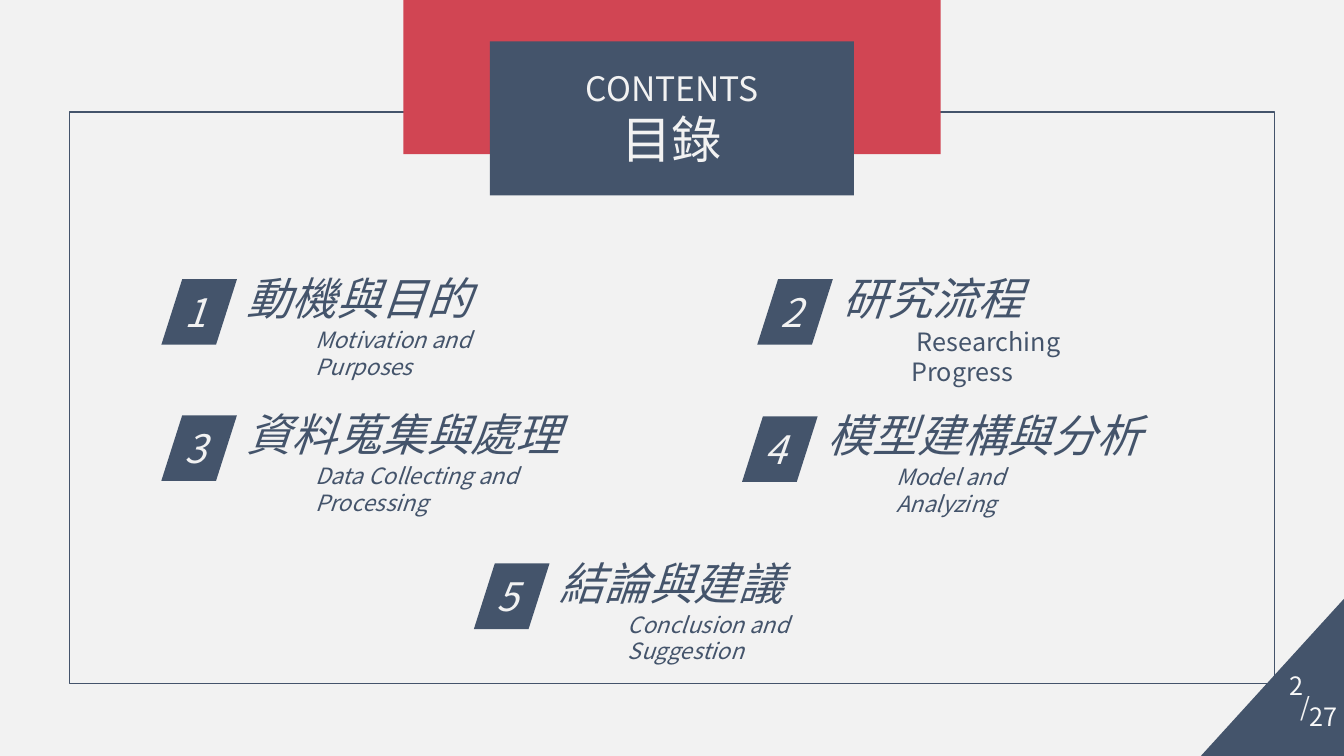
from lxml import etree
from pptx import Presentation
from pptx.dml.color import RGBColor
from pptx.enum.shapes import MSO_SHAPE
from pptx.enum.text import MSO_ANCHOR, MSO_AUTO_SIZE, PP_ALIGN
from pptx.oxml.ns import qn
from pptx.util import Inches, Pt

RECT = MSO_SHAPE.RECTANGLE
SLANT = MSO_SHAPE.PARALLELOGRAM
CORNER = MSO_SHAPE.RIGHT_TRIANGLE
CENTER, LEFT = PP_ALIGN.CENTER, PP_ALIGN.LEFT
MIDDLE, TOP = MSO_ANCHOR.MIDDLE, MSO_ANCHOR.TOP
FONT = "Noto Sans CJK SC"
COLORS = {"paper": "F2F2F2", "navy": "44546B", "red": "D14553", "white": "F8F8F8"}
WIDE, HIGH = 13.33, 7.5

TITLE = [("CONTENTS", 24), ("目錄", 36)]
# badge left and top, heading and its width, subtitle and its width
ITEMS = [
    (1.6, 2.77, "動機與目的", 2.45, "Motivation and Purposes", 2.31),
    (7.51, 2.77, "研究流程", 2.0, " Researching Progress", 2.32),
    (1.6, 4.12, "資料蒐集與處理", 3.34, "Data Collecting and Processing", 2.86),
    (7.36, 4.13, "模型建構與分析", 3.34, "Model and Analyzing", 2.04),
    (4.7, 5.59, "結論與建議", 2.45, "Conclusion and Suggestion", 2.51),
]
UPRIGHT = 2
PAGE = [
    ("2", 12.69, 6.6, 0.22, "white"),
    ("/", 12.8, 6.81, 0.22, "paper"),
    ("27", 12.88, 6.91, 0.5, "white"),
]
BADGE_W, BADGE_H = 0.75, 0.65


def color(name):
    return RGBColor.from_string(COLORS[name])


def write(shape, lines, tint="navy", italic=False, align=LEFT, anchor=TOP,
          inset=(0.1, 0.05, 0.1, 0.05), wrap=True):
    """Fill a shape with (text, size) lines, one paragraph each."""
    frame = shape.text_frame
    frame.auto_size = MSO_AUTO_SIZE.NONE
    frame.word_wrap = wrap
    frame.vertical_anchor = anchor
    (frame.margin_left, frame.margin_top,
     frame.margin_right, frame.margin_bottom) = map(Inches, inset)
    for i, (text, size) in enumerate(lines):
        para = frame.add_paragraph() if i else frame.paragraphs[0]
        para.alignment = align
        run = para.add_run()
        run.text = text
        font = run.font
        font.name, font.size, font.italic = FONT, Pt(size), italic
        font.color.rgb = color(tint)
        latin = run._r.rPr.find(qn("a:latin"))
        east = etree.Element(qn("a:ea"), typeface=FONT)
        latin.addnext(east)


def block(parent, kind, box, fill=None, line=None):
    shape = parent.shapes.add_shape(kind, *map(Inches, box))
    shape.shadow.inherit = False
    if fill:
        shape.fill.solid()
        shape.fill.fore_color.rgb = color(fill)
    else:
        shape.fill.background()
    if line:
        shape.line.color.rgb = color(line)
        shape.line.width = Pt(1)
    else:
        shape.line.fill.background()
    return shape


def label(parent, text, size, box, **style):
    shape = parent.shapes.add_textbox(*map(Inches, box))
    write(shape, [(text, size)], **style)


def middle(width):
    return (WIDE - width) / 2


def entry(slide, num, item):
    left, top, head, head_w, sub, sub_w = item
    group = slide.shapes.add_group_shape()
    badge = block(group, SLANT, (left, top, BADGE_W, BADGE_H), "navy")
    badge.adjustments[0] = 0.319
    write(badge, [(str(num), 28)], tint="paper", italic=True, align=CENTER,
          anchor=MIDDLE, inset=(0, 0.05, 0.08, 0.05))
    label(group, head, 32, (left + BADGE_W, top - 0.13, head_w, 0.64),
          italic=True, wrap=False)
    plain = num == UPRIGHT
    label(group, sub, 18 if plain else 16,
          (left + 1.43, top + 0.42, sub_w, 0.4), italic=not plain)


def main():
    deck = Presentation()
    deck.slide_width, deck.slide_height = Inches(WIDE), Inches(HIGH)
    slide = deck.slides.add_slide(deck.slide_layouts[5])
    slide.background.fill.solid()
    slide.background.fill.fore_color.rgb = color("paper")

    block(slide, RECT, (middle(11.95), 1.11, 11.95, 5.67), line="navy")
    banner = block(slide, RECT, (middle(5.33), 0, 5.33, 1.53), "red")

    title = slide.shapes.title
    title.left, title.top, title.width, title.height = map(
        Inches, (middle(3.61), 0.41, 3.61, 1.53))
    title.fill.solid()
    title.fill.fore_color.rgb = color("navy")
    write(title, TITLE, tint="paper", align=CENTER, anchor=MIDDLE,
          inset=(0, 0, 0, 0))
    banner._element.addnext(title._element)

    for num, item in enumerate(ITEMS, 1):
        entry(slide, num, item)

    corner = slide.shapes.add_group_shape()
    fold = block(corner, CORNER, (11.84, 6.01, 1.56, 1.42), "navy")
    fold.rotation = 270
    for text, left, top, width, tint in PAGE:
        label(corner, text, 18, (left, top, width, 0.4), tint=tint, align=CENTER)

    deck.save("out.pptx")


if __name__ == "__main__":
    main()
